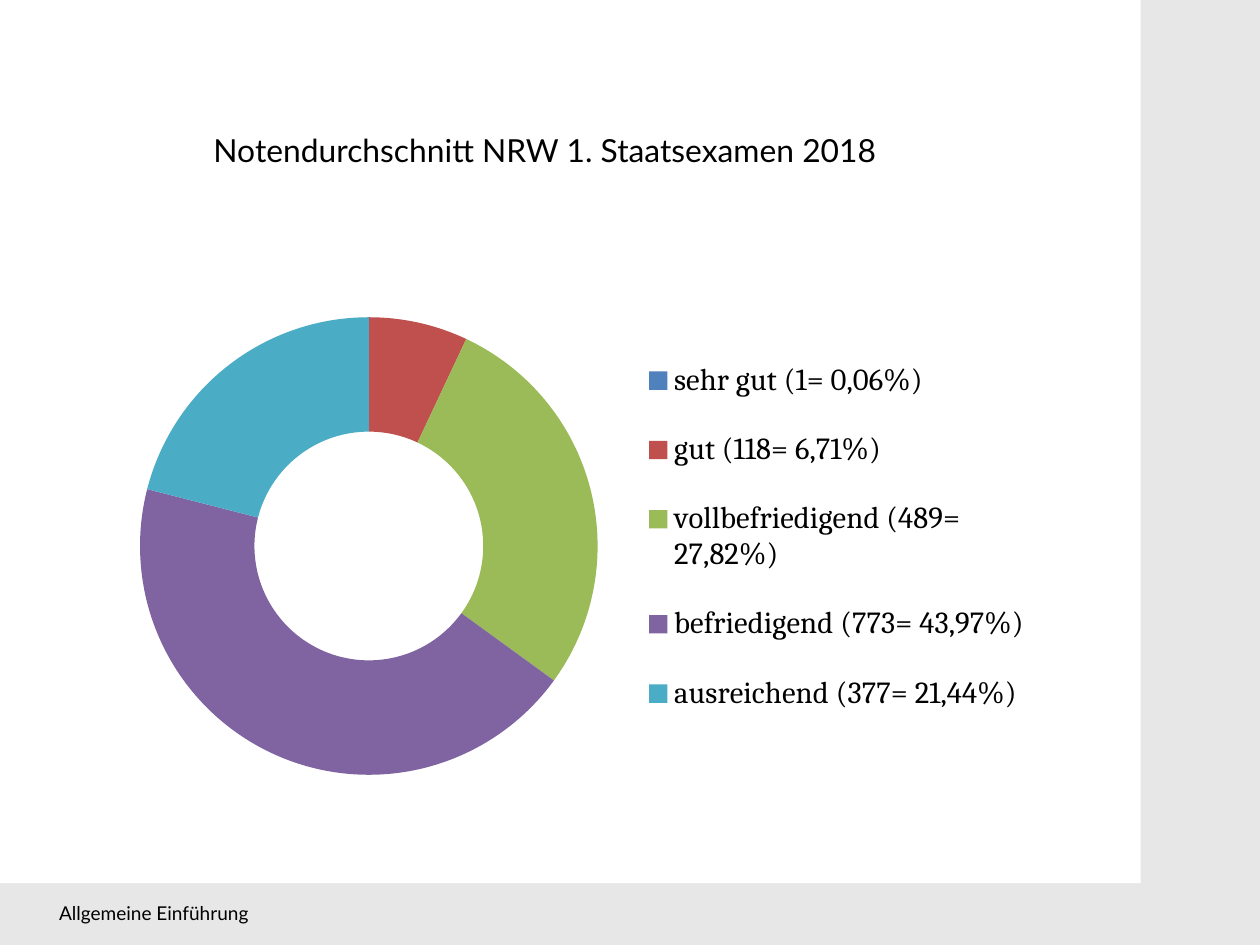
from dataclasses import dataclass

from lxml.etree import SubElement
from pptx import Presentation
from pptx.chart.data import CategoryChartData
from pptx.dml.color import RGBColor
from pptx.enum.chart import XL_CHART_TYPE, XL_LEGEND_POSITION
from pptx.enum.shapes import MSO_SHAPE
from pptx.enum.text import MSO_AUTO_SIZE
from pptx.oxml.ns import qn
from pptx.util import Pt

COLORS = {
    "background": "E7E7E7", "panel": "FFFFFF", "text": "000000",
    "blue": "4F81BD", "red": "C0504D", "green": "9BBB59",
    "purple": "8064A2", "teal": "4BACC6",
}


@dataclass
class Grade:
    label: str
    percent: int
    color: str


@dataclass
class Label:
    text: str
    left: float
    top: float
    width: float
    height: float
    size: float
    wrap: bool


GRADES = [
    Grade("sehr gut (1= 0,06%)", 0, "blue"),
    Grade("gut (118= 6,71%)", 7, "red"),
    Grade("vollbefriedigend (489= 27,82%)", 28, "green"),
    Grade("befriedigend (773= 43,97%)", 44, "purple"),
    Grade("ausreichend (377= 21,44%)", 21, "teal"),
]
LABELS = [
    Label("Notendurchschnitt NRW 1. Staatsexamen 2018", 127.4, 79, 437.8, 31.7, 20, True),
    Label("Allgemeine Einführung", 30.2, 564.5, 133.9, 21.6, 12, False),
]


def rgb(name: str) -> RGBColor:
    return RGBColor.from_string(COLORS[name])


def style_font(font, name: str, size: float) -> None:
    font.name = name
    font.size = Pt(size)
    font.color.rgb = rgb("text")


def add_label(s, label: Label) -> None:
    sp = s.shapes.add_textbox(Pt(label.left), Pt(label.top), Pt(label.width), Pt(label.height))
    tf = sp.text_frame
    tf.word_wrap = label.wrap
    tf.auto_size = MSO_AUTO_SIZE.SHAPE_TO_FIT_TEXT
    tf.text = label.text
    style_font(tf.paragraphs[0].runs[0].font, "Lato", label.size)


def set_layout(parent, x: float, y: float, w: float, h: float, inner: bool = False) -> None:
    """Place a chart part by fractions of the chart area."""
    layout = parent.find(qn("c:layout"))
    if layout is None:
        layout = SubElement(parent, qn("c:layout"))
        anchor = parent.find(qn("c:legendPos"))
        if anchor is None:
            parent.insert(0, layout)
        else:
            anchor.addnext(layout)
    manual = SubElement(layout, qn("c:manualLayout"))
    target = [("layoutTarget", "inner")] if inner else []
    modes = [("xMode", "edge"), ("yMode", "edge")]
    for tag, value in target + modes + [("x", x), ("y", y), ("w", w), ("h", h)]:
        SubElement(manual, qn(f"c:{tag}")).set("val", str(value))


def add_grade_chart(s) -> None:
    data = CategoryChartData()
    data.categories = [g.label for g in GRADES]
    data.add_series("Series 1", [g.percent for g in GRADES])
    chart = s.shapes.add_chart(
        XL_CHART_TYPE.DOUGHNUT, Pt(86.4), Pt(132.5), Pt(572.4), Pt(374.4), data
    ).chart
    chart.has_title = False
    style_font(chart.font, "Cambria", 19.3)
    chart.has_legend = True
    legend = chart.legend
    legend.position = XL_LEGEND_POSITION.RIGHT
    legend.include_in_layout = False
    style_font(legend.font, "Cambria", 19.3)

    plot = chart.plots[0]
    plot.vary_by_categories = True
    for i, grade in enumerate(GRADES):
        fill = plot.series[0].points[i].format.fill
        fill.solid()
        fill.fore_color.rgb = rgb(grade.color)

    plot_area = chart.element.find(".//" + qn("c:plotArea"))
    plot_area.find(".//" + qn("c:holeSize")).set("val", "50")
    set_layout(plot_area, 0, 0.18, 0.51, 0.77, inner=True)
    set_layout(chart.element.find(".//" + qn("c:legend")), 0.55, 0.2, 0.44, 0.7)


def main() -> None:
    prs = Presentation()
    prs.slide_width, prs.slide_height = Pt(793.7), Pt(595.3)
    s = prs.slides.add_slide(prs.slide_layouts[6])
    s.background.fill.solid()
    s.background.fill.fore_color.rgb = rgb("background")

    panel = s.shapes.add_shape(MSO_SHAPE.RECTANGLE, 0, 0, Pt(718.5), Pt(556.4))
    panel.shadow.inherit = False
    panel.fill.solid()
    panel.fill.fore_color.rgb = rgb("panel")
    panel.line.fill.background()

    add_grade_chart(s)
    for label in LABELS:
        add_label(s, label)
    prs.save("out.pptx")


if __name__ == "__main__":
    main()
